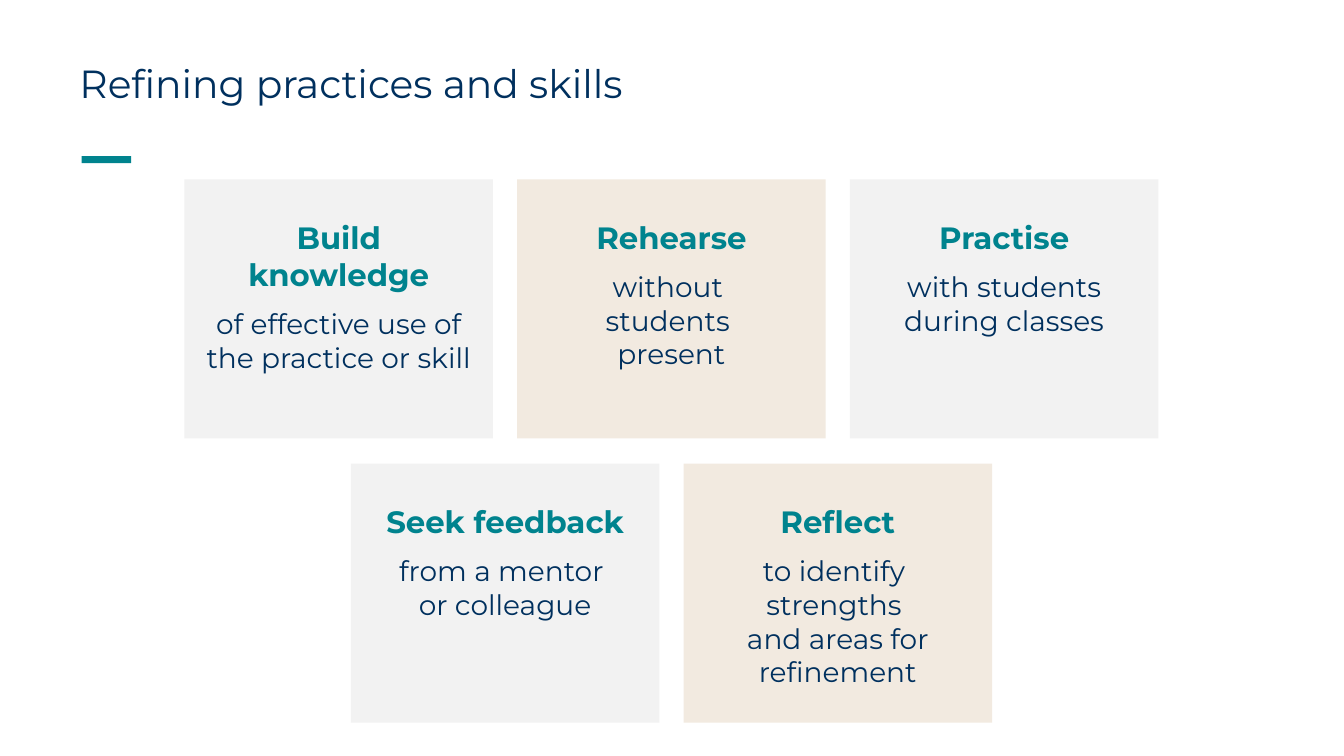
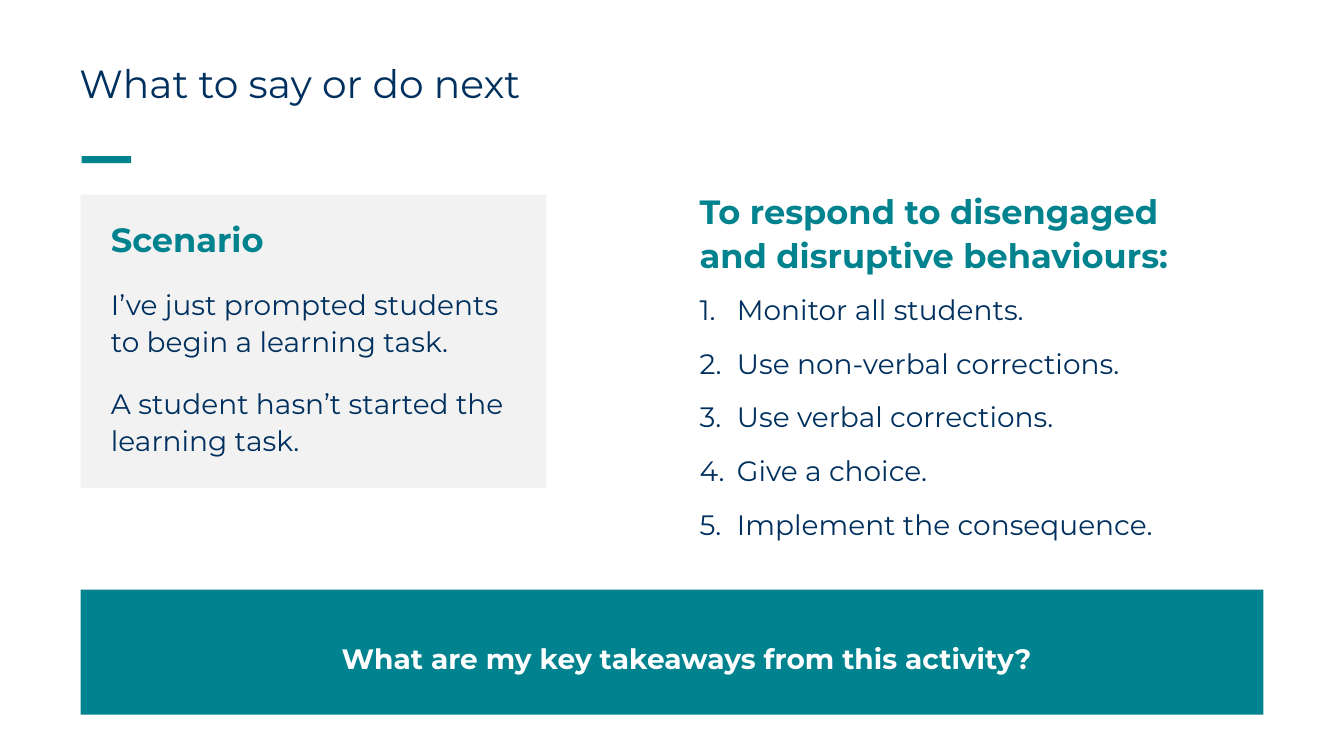
"""Build two slides on refining classroom practices and responding to students."""
import dataclasses
import typing

import lxml.etree
import pptx
import pptx.dml.color
import pptx.enum.shapes
import pptx.enum.text
import pptx.oxml.ns
import pptx.util

Inches = pptx.util.Inches
Pt = pptx.util.Pt
RGB = pptx.dml.color.RGBColor
ALIGN = pptx.enum.text.PP_ALIGN
ANCHOR = pptx.enum.text.MSO_ANCHOR

TEAL = RGB(0x00, 0x83, 0x8E)
NAVY = RGB(0x00, 0x30, 0x5E)
GREY = RGB(0xF2, 0xF2, 0xF2)
SAND = RGB(0xF2, 0xEA, 0xE0)
WHITE = RGB(0xFF, 0xFF, 0xFF)
FONT = "Montserrat"

CARD_W, CARD_H = 3.06, 2.57
STEP_X, STEP_Y = 3.3, 2.82
GRID_MID, GRID_TOP = 6.66, 1.78


@dataclasses.dataclass(frozen=True)
class Box:
    left: float
    top: float
    width: float
    height: float

    def place(self) -> tuple:
        return tuple(Inches(n) for n in dataclasses.astuple(self))


@dataclasses.dataclass(frozen=True)
class Para:
    text: str
    size: float = 20
    color: RGB = NAVY
    bold: bool = False
    form: dict = dataclasses.field(default_factory=dict)
    indent: float = 0
    hang: float = 0
    number: bool = False


@dataclasses.dataclass(frozen=True)
class Card:
    head: str
    body: str
    side: float = 0.2


ROWS = (
    (
        Card("Build knowledge", "of effective use of the practice or skill"),
        Card("Rehearse", "without \nstudents \npresent"),
        Card("Practise", "with students during classes"),
    ),
    (
        Card("Seek feedback", "from a mentor \nor colleague"),
        Card("Reflect", "to identify \nstrengths \nand areas for refinement", 0.08),
    ),
)
STEPS = (
    "Monitor all students.",
    "Use non-verbal corrections.",
    "Use verbal corrections.",
    "Give a choice.",
    "Implement the consequence.",
)


def apply(target: typing.Any, form: dict) -> None:
    for name, value in form.items():
        setattr(target, name, value)


def write(shape: typing.Any, paras: typing.Sequence[Para],
          inset: tuple = (0.1, 0.05, 0.1, 0.05), anchor: typing.Any = ANCHOR.TOP) -> None:
    frame = shape.text_frame
    sides = ("margin_left", "margin_top", "margin_right", "margin_bottom")
    apply(frame, dict(zip(sides, map(Inches, inset))))
    apply(frame, {"word_wrap": True, "vertical_anchor": anchor})
    for index, item in enumerate(paras):
        para = frame.add_paragraph() if index else frame.paragraphs[0]
        para.text = item.text
        apply(para, {"alignment": ALIGN.LEFT, **item.form})
        for run in para.runs:
            apply(run.font, {"name": FONT, "size": Pt(item.size), "bold": item.bold})
            run.font.color.rgb = item.color
        props = para._p.get_or_add_pPr()
        props.set("marL", str(Inches(item.indent)))
        props.set("indent", str(Inches(-item.hang)))
        if item.number:
            mark = lxml.etree.SubElement(props, pptx.oxml.ns.qn("a:buAutoNum"))
            mark.set("type", "arabicPeriod")


def add_block(slide: typing.Any, box: Box, fill: RGB) -> typing.Any:
    kind = pptx.enum.shapes.MSO_SHAPE.RECTANGLE
    shape = slide.shapes.add_shape(kind, *box.place())
    shape.shadow.inherit = False
    shape.fill.solid()
    shape.fill.fore_color.rgb = fill
    shape.line.fill.background()
    return shape


def add_text(slide: typing.Any, box: Box, *paras: Para,
             anchor: typing.Any = ANCHOR.TOP) -> None:
    write(slide.shapes.add_textbox(*box.place()), paras, anchor=anchor)


def add_slide(deck: typing.Any, title: str) -> typing.Any:
    slide = deck.slides.add_slide(deck.slide_layouts[6])
    add_block(slide, Box(0.81, 1.55, 0.49, 0.07), TEAL)
    add_text(slide, Box(0.69, 0.44, 11.94, 0.83),
             Para(title, 28, form={"line_spacing": 0.9}), anchor=ANCHOR.MIDDLE)
    return slide


def add_card(slide: typing.Any, card: Card, box: Box, fill: RGB) -> None:
    mid = {"alignment": ALIGN.CENTER}
    paras = (
        Para(card.head, 22, TEAL, True, {**mid, "space_after": Pt(10)}),
        Para(card.body, form=mid),
    )
    write(add_block(slide, box, fill), paras, (card.side, 0.39, card.side, 0.05))


def draw_skills(deck: typing.Any) -> None:
    slide = add_slide(deck, "Refining practices and skills")
    for row, cards in enumerate(ROWS):
        span = (len(cards) - 1) * STEP_X + CARD_W
        for col, card in enumerate(cards):
            box = Box(GRID_MID - span / 2 + col * STEP_X,
                      GRID_TOP + row * STEP_Y, CARD_W, CARD_H)
            add_card(slide, card, box, (GREY, SAND)[col % 2])


def draw_next(deck: typing.Any) -> None:
    slide = add_slide(deck, "What to say or do next")
    loose = {"line_spacing": 1.1, "space_after": Pt(18)}
    scene = (
        Para("Scenario", 24, TEAL, True, loose),
        Para("I’ve just prompted students \nto begin a learning task.", form=loose),
        Para("A student hasn’t started the learning task.", form=loose),
    )
    write(add_block(slide, Box(0.8, 1.93, 4.62, 2.91), GREY), scene, (0.3, 0.2, 0.2, 0.2))
    head = Para("To respond to disengaged and disruptive behaviours:", 24, TEAL, True,
                {**loose, "space_after": Pt(10)})
    tight = {**loose, "space_after": Pt(12)}
    steps = (Para(text, form=tight, indent=0.37, hang=0.37, number=True) for text in STEPS)
    add_text(slide, Box(6.84, 1.8, 5.34, 3.65), head, *steps)
    add_block(slide, Box(0.8, 5.85, 11.73, 1.24), TEAL)
    close = {"alignment": ALIGN.CENTER, "line_spacing": 1.2, "space_after": Pt(36)}
    add_text(slide, Box(1.33, 6.25, 10.67, 0.47),
             Para("What are my key takeaways from this activity?", 20, WHITE, True,
                  close, indent=0.29))


def main() -> None:
    deck = pptx.Presentation()
    apply(deck, {"slide_width": Inches(13.33), "slide_height": Inches(7.5)})
    draw_skills(deck)
    draw_next(deck)
    deck.save("out.pptx")


if __name__ == "__main__":
    main()
